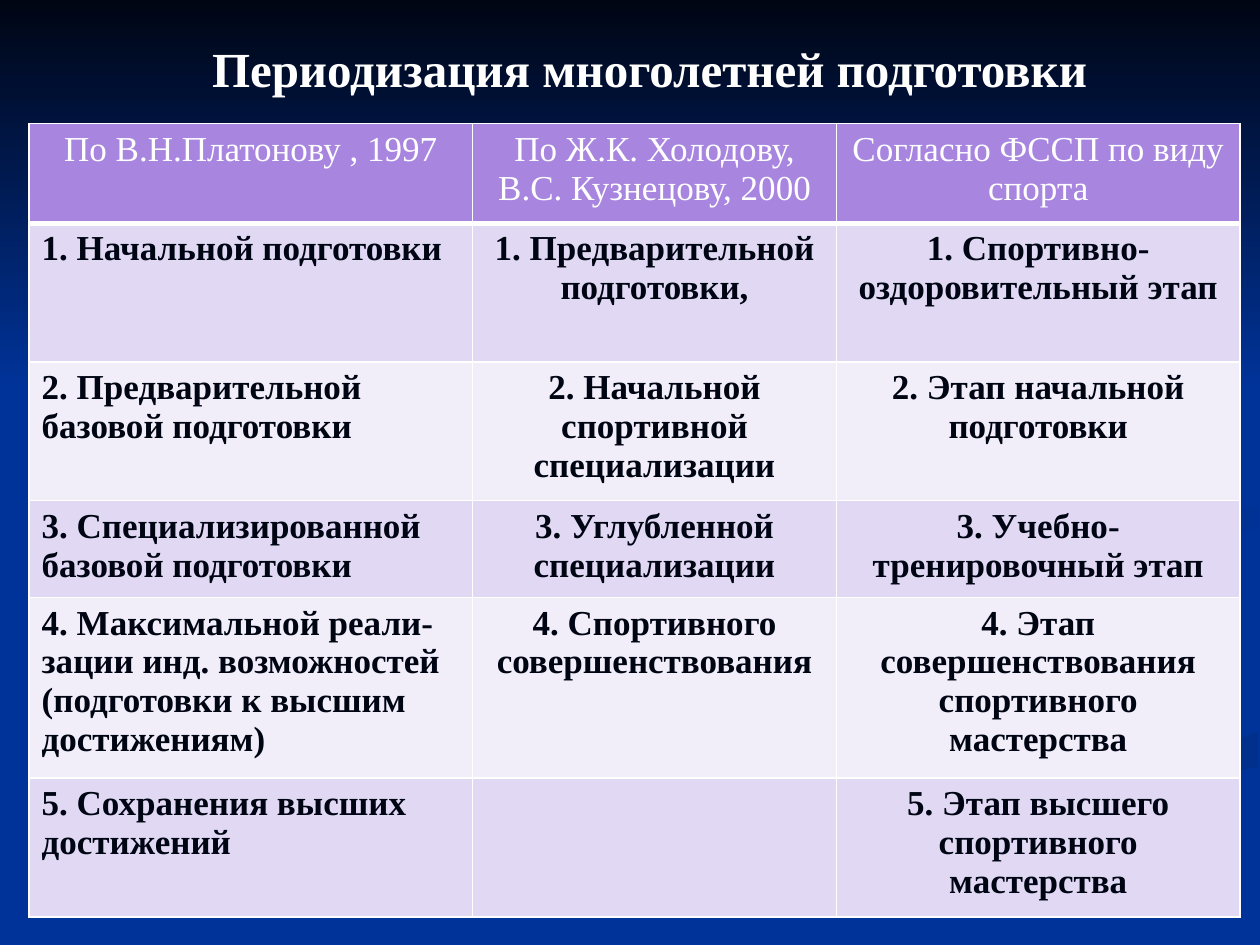
from lxml import etree
from pptx import Presentation
from pptx.dml.color import RGBColor
from pptx.enum import shapes, text
from pptx.oxml.ns import qn
from pptx.util import Pt

FONT = "Times New Roman"
NAVY, BLUE, WHITE = "000514", "003399", "FFFFFF"
HEADER_FILL, BAND_FILLS = "A886E0", ("E1D9F3", "F1EDF9")

COLUMN_WIDTHS = (253.4, 208.1, 230.4)
ROW_HEIGHTS = (57, 79.2, 79.2, 55.4, 103, 79.2)
ROWS = (
    ("По В.Н.Платонову , 1997", "По Ж.К. Холодову, В.С. Кузнецову, 2000",
     "Согласно ФССП по виду спорта"),
    ("1. Начальной подготовки", "1. Предварительной подготовки,",
     "1. Спортивно-оздоровительный этап"),
    ("2. Предварительной базовой подготовки",
     "2. Начальной спортивной специализации", "2. Этап начальной подготовки"),
    ("3. Специализированной базовой подготовки",
     "3. Углубленной специализации", "3. Учебно-тренировочный этап"),
    ("4. Максимальной реали-зации инд. возможностей "
     "(подготовки к высшим достижениям)",
     "4. Спортивного совершенствования",
     "4. Этап совершенствования спортивного мастерства"),
    ("5. Сохранения высших достижений", "",
     "5. Этап высшего спортивного мастерства"),
)

# Ribbon outlines: points, first colour, last colour, clockwise angle
RIBBONS = (
    (((562, 398), (545, 391), (515, 380), (476, 369), (442, 357), (423, 346),
      (414, 336), (414, 330), (410, 340), (418, 348), (433, 356), (454, 364),
      (489, 374), (524, 385), (549, 394), (562, 400), (566, 408), (562, 417),
      (546, 425), (523, 433), (492, 441), (444, 453), (388, 467), (330, 485),
      (271, 509), (216, 539), (260, 539), (310, 514), (359, 495), (406, 479),
      (449, 466), (487, 456), (519, 449), (544, 442), (566, 433), (574, 423),
      (576, 418), (570, 404)), BLUE, "003193", 0),
    (((374, 538), (362, 539), (411, 539), (432, 528), (467, 511), (500, 498),
      (541, 484), (591, 469), (650, 454), (719, 438), (719, 418), (693, 428),
      (650, 439), (598, 453), (550, 466), (501, 482), (454, 499), (410, 518)),
     "002F8C", BLUE, 90),
    (((562, 331), (563, 338), (574, 348), (595, 357), (582, 348), (580, 340),
      (585, 333), (607, 323), (645, 313), (699, 305), (719, 302), (719, 289),
      (696, 294), (647, 301), (601, 309), (575, 318)), "003091", BLUE, 45),
)


def color(hex_string):
    return RGBColor.from_string(hex_string)


def fill_gradient(shape, first, last, clockwise_angle):
    shape.fill.gradient()
    shape.fill.gradient_angle = -clockwise_angle % 360
    for stop, hex_string in zip(shape.fill.gradient_stops, (first, last)):
        stop.color.rgb = color(hex_string)
    shape.line.fill.background()
    shape.shadow.inherit = False


def add_ribbon(slide, points, *gradient):
    start, *others = [(Pt(x), Pt(y)) for x, y in points]
    builder = slide.shapes.build_freeform(*start)
    builder.add_line_segments(others, close=True)
    fill_gradient(builder.convert_to_shape(), *gradient)


def add_top_shade(slide):
    shade = slide.shapes.add_shape(
        shapes.MSO_SHAPE.RECTANGLE, 0, 0, Pt(720), Pt(222))
    fill_gradient(shade, NAVY, BLUE, 90)


def write(frame, content, alignment, hex_string, **font_values):
    paragraph = frame.paragraphs[0]
    paragraph.alignment = alignment
    font = paragraph.font
    if content:
        run = paragraph.add_run()
        run.text = content
        font = run.font
    for name, value in {"name": FONT, **font_values}.items():
        setattr(font, name, value)
    font.color.rgb = color(hex_string)


def add_title(slide, content):
    box = slide.shapes.add_textbox(Pt(22.3), Pt(16.6), Pt(697.7), Pt(44.6))
    frame = box.text_frame
    frame.word_wrap = True
    frame.vertical_anchor = text.MSO_ANCHOR.MIDDLE
    write(frame, content, text.PP_ALIGN.CENTER, WHITE, size=Pt(28), bold=True)


def set_borders(cell, **widths):
    """Draw white borders; widths maps L, R, T, B to points."""
    properties = cell._tc.get_or_add_tcPr()
    for index, (side, width) in enumerate(widths.items()):
        line = etree.Element(qn(f"a:ln{side}"), w=str(Pt(width)))
        fill = etree.SubElement(line, qn("a:solidFill"))
        etree.SubElement(fill, qn("a:srgbClr"), val=WHITE)
        properties.insert(index, line)


def add_stage_table(slide):
    table = slide.shapes.add_table(
        len(ROWS), len(COLUMN_WIDTHS), Pt(16.6), Pt(70.6),
        Pt(sum(COLUMN_WIDTHS)), Pt(sum(ROW_HEIGHTS))).table
    for column, width in zip(table.columns, COLUMN_WIDTHS):
        column.width = Pt(width)
    for row_index, (row, height) in enumerate(zip(table.rows, ROW_HEIGHTS)):
        row.height = Pt(height)
        header = row_index == 0
        for column_index, cell in enumerate(row.cells):
            centered = header or column_index > 0
            write(cell.text_frame, ROWS[row_index][column_index],
                  text.PP_ALIGN.CENTER if centered else text.PP_ALIGN.LEFT,
                  WHITE if header else NAVY, size=Pt(20), bold=not header)
            cell.fill.solid()
            cell.fill.fore_color.rgb = color(
                HEADER_FILL if header else BAND_FILLS[(row_index - 1) % 2])
            set_borders(cell, L=1, R=1, T=1, B=3 if header else 1)


def main():
    presentation = Presentation()
    presentation.slide_width, presentation.slide_height = Pt(720), Pt(540)
    slide = presentation.slides.add_slide(presentation.slide_layouts[6])
    slide.background.fill.solid()
    slide.background.fill.fore_color.rgb = color(BLUE)
    for ribbon in RIBBONS:
        add_ribbon(slide, *ribbon)
    add_top_shade(slide)
    add_title(slide, "Периодизация многолетней подготовки")
    add_stage_table(slide)
    presentation.save("out.pptx")


if __name__ == "__main__":
    main()
